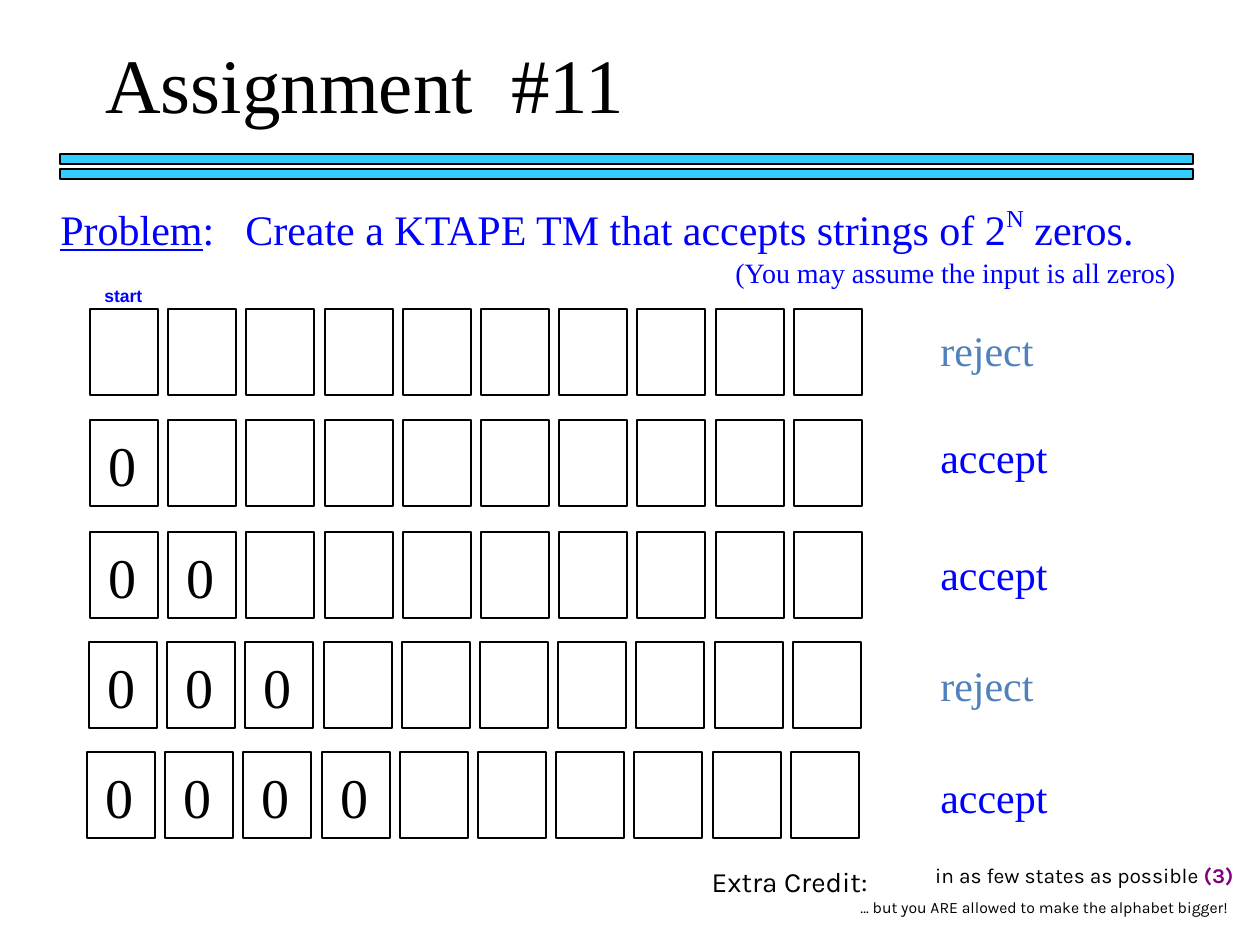
from dataclasses import dataclass

from lxml import etree
from pptx import Presentation
from pptx import util as u
from pptx.dml.color import RGBColor
from pptx.enum import shapes, text
from pptx.oxml import ns

PX = u.Inches(1) / 126


def px(length):
    """Turn px into EMU."""
    return u.Emu(round(length * PX))


@dataclass(frozen=True)
class Theme:
    """Colours, fonts and type sizes of the slide."""
    ink: str = "000000"
    blue: str = "0000FF"
    steel: str = "4F81BD"
    purple: str = "800080"
    bar: str = "33CCFF"
    serif: str = "Times New Roman"
    sans: str = "Arial"
    note: str = "Karla"
    title: int = 44
    symbol: int = 32
    body: int = 24
    remark: int = 16
    detail: int = 12
    label: int = 10
    small: int = 9


class SlideBuilder:
    """Draws elements on one slide in one theme."""

    def __init__(self, slide, theme):
        """Keep the slide and its theme."""
        self.slide, self.theme = slide, theme

    def boxes(self, frames, weight, fill=None):
        """Draw a group of outlined rectangles."""
        group = self.slide.shapes.add_group_shape()
        for frame in frames:
            box = group.shapes.add_shape(shapes.MSO_SHAPE.RECTANGLE, *map(px, frame))
            box.shadow.inherit = False
            if fill:
                box.fill.solid()
                box.fill.fore_color.rgb = RGBColor.from_string(fill)
            else:
                box.fill.background()
            box.line.color.rgb = RGBColor.from_string(self.theme.ink)
            box.line.width = u.Pt(weight)

    def words(self, frame, runs, size, color, font, wrap=False, middle=True,
              bold=None, align=None, spacing=None, tab=None):
        """Write one paragraph and return its runs."""
        box = self.slide.shapes.add_textbox(*map(px, frame)).text_frame
        box.word_wrap = wrap
        box.auto_size = text.MSO_AUTO_SIZE.SHAPE_TO_FIT_TEXT
        box.vertical_anchor = text.MSO_ANCHOR.MIDDLE if middle else text.MSO_ANCHOR.TOP
        line = box.paragraphs[0]
        if align:
            line.alignment = align
        if spacing:
            line.line_spacing = spacing
        if tab:
            self.tab_stop(line, tab)
        line.font.size, line.font.name, line.font.bold = u.Pt(size), font, bold
        line.font.color.rgb = RGBColor.from_string(color)
        for words in runs:
            line.add_run().text = words
        return line.runs

    def tab_stop(self, line, position):
        """Set one left tab stop on a paragraph."""
        stops = etree.SubElement(line._p.get_or_add_pPr(), ns.qn("a:tabLst"))
        etree.SubElement(stops, ns.qn("a:tab"), pos=str(px(position)), algn="l")


def main():
    """Build the slide and save it."""
    deck = Presentation()
    deck.slide_width, deck.slide_height = u.Inches(10), u.Inches(7.5)
    theme = Theme()
    page = SlideBuilder(deck.slides.add_slide(deck.slide_layouts[6]), theme)
    right = text.PP_ALIGN.RIGHT

    page.boxes([(60, top, 1133, 10) for top in (154, 169)], 0.75, theme.bar)
    page.words((93, 30, 1072, 105), ["Assignment\t#11"], theme.title, theme.ink,
               theme.serif, wrap=True, middle=False, tab=406)
    problem, _, exponent, _ = page.words(
        (48, 197, 1140, 63),
        ["Problem", ":\tCreate a KTAPE TM that accepts strings of 2", "N", " zeros."],
        theme.body, theme.blue, theme.serif, wrap=True, tab=185)
    problem.font.underline = True
    exponent._r.get_or_add_rPr().set("baseline", "42000")

    page.words((92, 278, 63, 34), ["start"], theme.label, theme.blue, theme.sans, bold=True)
    verdict_colors = {"accept": theme.blue, "reject": theme.steel}
    verdict_widths = {"accept": 132, "reject": 118}
    tapes = [
        (90, 309, "reject", 318),
        (90, 420, "accept", 425),
        (90, 532, "accept", 542),
        (89, 642, "reject", 653),
        (87, 752, "accept", 765),
    ]
    for zeros, (left, top, verdict, verdict_top) in enumerate(tapes):
        cells = [left + round(78.2 * column) for column in range(10)]
        page.boxes([(cell, top, 68, 86) for cell in cells], 1.5)
        for cell in cells[:zeros]:
            page.words((cell + 6, top + 5, 53, 79), ["0"], theme.symbol, theme.ink, theme.serif)
        page.words((928, verdict_top, verdict_widths[verdict], 63), [verdict],
                   theme.body, verdict_colors[verdict], theme.serif)

    page.words((723, 249, 470, 47), ["(You may assume the input is all zeros)"],
               theme.remark, theme.blue, theme.serif)
    _, count = page.words((742, 867, 504, 25), ["in as few states as possible ", "(3)"],
                          theme.detail, theme.ink, theme.note, wrap=True, middle=False,
                          align=right, spacing=0.5)
    count.font.bold = True
    count.font.color.rgb = RGBColor.from_string(theme.purple)
    page.words((692, 858, 188, 47), ["Extra Credit:"], theme.remark, theme.ink,
               theme.note, align=right)
    page.words((848, 891, 398, 32), ["… but you ARE allowed to make the alphabet bigger!"],
               theme.small, theme.ink, theme.note)
    deck.save("out.pptx")


if __name__ == "__main__":
    main()
